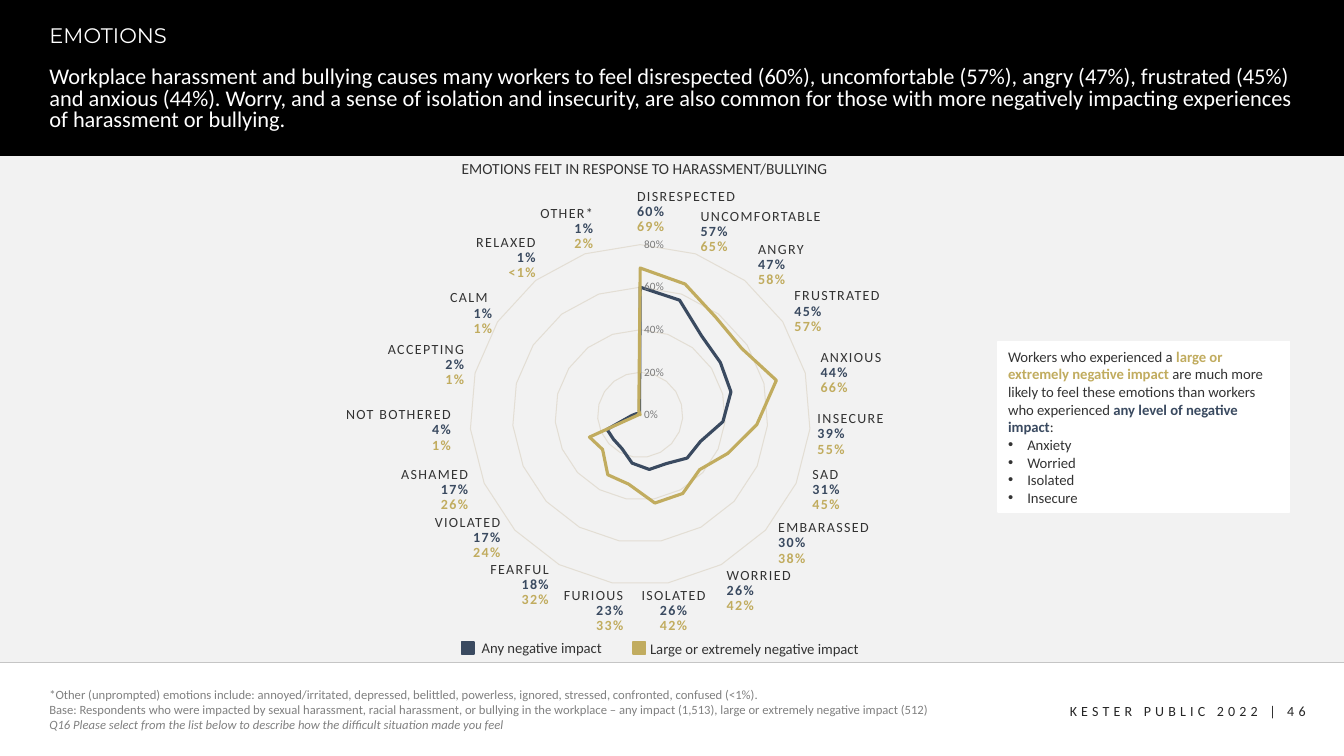
"""Build the slide on emotions felt in response to harassment and bullying."""
from dataclasses import dataclass
from typing import NamedTuple, Optional

from lxml.etree import SubElement
from pptx import Presentation
from pptx.chart.data import CategoryChartData
from pptx.dml.color import RGBColor
from pptx.enum.chart import XL_CHART_TYPE as ChartType, XL_TICK_MARK as TickMark
from pptx.enum.shapes import MSO_CONNECTOR as Connector, MSO_SHAPE as ShapeType
from pptx.enum.text import MSO_ANCHOR as Anchor, MSO_AUTO_SIZE as AutoSize, PP_ALIGN as Align
from pptx.oxml.ns import qn
from pptx.util import Inches, Pt


@dataclass(frozen=True)
class Theme:
    """Colours, fonts and type sizes of the slide."""
    black: str = "000000"
    white: str = "FFFFFF"
    panel: str = "F2F2F2"
    rule: str = "BFBFBF"
    grid: str = "E3DED4"
    ink: str = "333333"
    footer_ink: str = "262626"
    axis_ink: str = "7A7A7A"
    note_ink: str = "808080"
    any_impact: str = "3A4A60"
    large_impact: str = "C1AC5F"
    heading_font: str = "Montserrat"
    body_font: str = "Calibri"
    title_size: float = 15
    lead_size: float = 16
    chart_title_size: float = 11
    callout_size: float = 10.5
    label_size: float = 10
    note_size: float = 9
    axis_size: float = 8


THEME = Theme()


class Box(NamedTuple):
    """A rectangle in inches."""
    left: float
    top: float
    width: float
    height: float

    def lengths(self) -> tuple:
        """Return the four sides as lengths."""
        return tuple(Inches(value) for value in self)


class Emotion(NamedTuple):
    """An emotion with its two percentages and the place of its label."""
    name: str
    any_impact: int
    large_impact: int
    left: float
    top: float
    align: Align = Align.LEFT
    width: float = 1.2


@dataclass(frozen=True)
class Run:
    """A stretch of text in one colour and weight."""
    text: str
    color: str = THEME.ink
    bold: bool = False
    italic: bool = False


class LegendKey(NamedTuple):
    """A legend entry with its swatch and text positions."""
    text: str
    color: str
    swatch_left: float
    text_box: Box


EMOTIONS = [
    Emotion("DISRESPECTED", 60, 69, 6.22, 1.99),
    Emotion("UNCOMFORTABLE", 57, 65, 6.85, 2.19, width=1.53),
    Emotion("ANGRY", 47, 58, 7.42, 2.52),
    Emotion("FRUSTRATED", 45, 57, 7.78, 2.98),
    Emotion("ANXIOUS", 44, 66, 8.04, 3.59),
    Emotion("INSECURE", 39, 55, 8.01, 4.2),
    Emotion("SAD", 31, 45, 7.96, 4.75, width=1.53),
    Emotion("EMBARASSED", 30, 38, 7.62, 5.28),
    Emotion("WORRIED", 26, 42, 7.11, 5.75),
    Emotion("ISOLATED", 26, 42, 6.08, 5.95, Align.CENTER),
    Emotion("FURIOUS", 23, 33, 5.08, 5.95, Align.RIGHT),
    Emotion("FEARFUL", 18, 32, 4.69, 5.69, Align.RIGHT, 0.85),
    Emotion("VIOLATED", 17, 24, 3.86, 5.23, Align.RIGHT),
    Emotion("ASHAMED", 17, 26, 3.54, 4.75, Align.RIGHT),
    Emotion("NOT BOTHERED", 4, 1, 3.26, 4.16, Align.RIGHT, 1.31),
    Emotion("ACCEPTING", 2, 1, 3.5, 3.51, Align.RIGHT),
    Emotion("CALM ", 1, 1, 3.78, 3, Align.RIGHT),
    Emotion("RELAXED", 1, 0, 4.21, 2.45, Align.RIGHT),
    Emotion("OTHER*", 1, 2, 4.78, 2.16, Align.RIGHT),
]
LEGEND = [
    LegendKey("Any negative impact", THEME.any_impact, 4.58, Box(4.68, 6.29, 1.54, 0.28)),
    LegendKey("Large or extremely negative impact", THEME.large_impact, 6.28, Box(6.35, 6.3, 2.53, 0.28)),
]
LEAD = ("Workplace harassment and bullying causes many workers to feel disrespected (60%), uncomfortable (57%), "
        "angry (47%), frustrated (45%) and anxious (44%). Worry, and a sense of isolation and insecurity, are also "
        "common for those with more negatively impacting experiences of harassment or bullying.")
CALLOUT = [[
    Run("Workers who experienced a "),
    Run("large or extremely negative impact", THEME.large_impact, bold=True),
    Run(" are much more likely to feel these emotions than workers who experienced "),
    Run("any level of negative impact", THEME.any_impact, bold=True),
    Run(":"),
]] + [[Run(item)] for item in ("Anxiety", "Worried", "Isolated", "Insecure")]
NOTES = [
    [Run("*Other (unprompted) emotions include: annoyed/irritated, depressed, belittled, powerless, ignored, "
         "stressed, confronted, confused (<1%).", THEME.note_ink)],
    [Run("Base: Respondents who were impacted by sexual harassment, racial harassment, or bullying in the workplace "
         "– any impact (1,513), large or extremely negative impact (512)", THEME.note_ink)],
    [Run("Q16 Please select from the list below to describe how the difficult situation made you feel",
         THEME.note_ink, italic=True)],
]


def rgb(color: str) -> RGBColor:
    """Turn a hex string into a colour."""
    return RGBColor.from_string(color)


def write_text(shape, paragraphs: list, *, size: float, font: str = THEME.body_font, align: Align = Align.LEFT,
               anchor: Anchor = Anchor.MIDDLE, line_spacing: float = 1.0, space_before: float = 0,
               tracking: float = 0, bullets_from: Optional[int] = None) -> None:
    """Fill a shape with paragraphs of runs in the given format."""
    frame = shape.text_frame
    frame.word_wrap, frame.auto_size, frame.vertical_anchor = True, AutoSize.NONE, anchor
    for index, runs in enumerate(paragraphs):
        paragraph = frame.add_paragraph() if index else frame.paragraphs[0]
        paragraph.alignment, paragraph.line_spacing = align, line_spacing
        paragraph.space_before, paragraph.space_after = Pt(space_before), Pt(0)
        if bullets_from is not None and index >= bullets_from:
            properties = paragraph._p.get_or_add_pPr()
            properties.set("marL", str(Inches(0.19)))
            properties.set("indent", str(-Inches(0.19)))
            SubElement(properties, qn("a:buFont"), typeface="Arial")
            SubElement(properties, qn("a:buChar"), char="•")
        for item in runs:
            run = paragraph.add_run()
            run.text = item.text
            run.font.name, run.font.size = font, Pt(size)
            run.font.bold, run.font.italic = item.bold, item.italic
            run.font.color.rgb = rgb(item.color)
            if tracking:
                run._r.get_or_add_rPr().set("spc", str(int(tracking * 100)))


def add_text(slide, box: Box, paragraphs: list, **text_format) -> None:
    """Add a text box."""
    write_text(slide.shapes.add_textbox(*box.lengths()), paragraphs, **text_format)


def add_block(slide, box: Box, color: str):
    """Add a plain filled rectangle."""
    shape = slide.shapes.add_shape(ShapeType.RECTANGLE, *box.lengths())
    shape.shadow.inherit = False
    shape.fill.solid()
    shape.fill.fore_color.rgb = rgb(color)
    shape.line.fill.background()
    return shape


def add_rule(slide, top: float) -> None:
    """Add a thin line across the slide."""
    line = slide.shapes.add_connector(Connector.STRAIGHT, 0, Inches(top), Inches(13.33), Inches(top))
    line.line.color.rgb, line.line.width = rgb(THEME.rule), Pt(0.5)
    SubElement(line._element.spPr, qn("a:effectLst"))


def place_placeholder(placeholder, box: Box, text: str, **text_format) -> None:
    """Move a placeholder to the front and fill it."""
    placeholder.left, placeholder.top, placeholder.width, placeholder.height = box.lengths()
    tree = placeholder.element.getparent()
    tree.append(placeholder.element)
    write_text(placeholder, [[Run(text, THEME.white)]], **text_format)


def add_radar(slide, box: Box) -> None:
    """Add the radar chart of both impact levels."""
    data = CategoryChartData(number_format="0%")
    data.categories = [str(number) for number in range(1, len(EMOTIONS) + 1)]
    data.add_series("Series 1", [emotion.any_impact / 100 for emotion in EMOTIONS])
    data.add_series("Series 2", [emotion.large_impact / 100 for emotion in EMOTIONS])
    chart = slide.shapes.add_chart(ChartType.RADAR, *box.lengths(), data).chart
    chart.has_legend = chart.has_title = False
    chart.font.name, chart.font.size = THEME.body_font, Pt(THEME.label_size)
    chart.font.color.rgb = rgb(THEME.ink)
    chart.plots[0].vary_by_categories = False
    for series, color in zip(chart.plots[0].series, (THEME.any_impact, THEME.large_impact)):
        series.smooth = False
        series.format.line.color.rgb, series.format.line.width = rgb(color), Pt(2.25)
    chart.category_axis.visible = False
    axis = chart.value_axis
    axis.minimum_scale, axis.maximum_scale, axis.major_unit = 0, 0.8, 0.2
    axis.major_tick_mark = axis.minor_tick_mark = TickMark.NONE
    axis.format.line.fill.background()
    axis.has_major_gridlines = True
    grid = axis.major_gridlines.format.line
    grid.color.rgb, grid.width = rgb(THEME.grid), Pt(0.75)
    labels = axis.tick_labels
    labels.number_format, labels.number_format_is_linked = "0%", False
    labels.font.name, labels.font.size = THEME.body_font, Pt(THEME.axis_size)
    labels.font.color.rgb = rgb(THEME.axis_ink)
    plot_area = chart._chartSpace.find(".//" + qn("c:plotArea"))
    for old_layout in plot_area.findall(qn("c:layout")):
        plot_area.remove(old_layout)
    layout = SubElement(plot_area, qn("c:layout"))
    plot_area.insert(0, layout)
    manual = SubElement(layout, qn("c:manualLayout"))
    for tag, value in (("layoutTarget", "inner"), ("xMode", "edge"), ("yMode", "edge"),
                       ("x", "0.231"), ("y", "0.318"), ("w", "0.436"), ("h", "0.654")):
        SubElement(manual, qn(f"c:{tag}"), val=value)


def add_emotion_label(slide, emotion: Emotion) -> None:
    """Add the name and both percentages of an emotion."""
    shares = ((emotion.any_impact, THEME.any_impact), (emotion.large_impact, THEME.large_impact))
    lines = [[Run(emotion.name)]] + [[Run(f"{share or '<1'}%", color, bold=True)] for share, color in shares]
    add_text(slide, Box(emotion.left, emotion.top, emotion.width, 0.22), lines, size=THEME.label_size,
             align=emotion.align, line_spacing=0.9, tracking=1)


def main() -> None:
    """Build and save the presentation."""
    presentation = Presentation()
    presentation.slide_width, presentation.slide_height = Inches(13.33), Inches(7.5)
    slide = presentation.slides.add_slide(presentation.slide_layouts[2])
    title, lead = slide.placeholders
    add_block(slide, Box(0, 0, 13.33, 1.57), THEME.black)
    add_rule(slide, 6.57)
    add_text(slide, Box(10.08, 6.92, 2.97, 0.27), [[Run("KESTER PUBLIC 2022 | 46", THEME.footer_ink)]],
             size=THEME.label_size, align=Align.RIGHT, anchor=Anchor.TOP, tracking=3)
    add_block(slide, Box(0, 1.55, 13.33, 5.02), THEME.panel)
    add_radar(slide, Box(2.87, 0.66, 7.75, 5.36))
    place_placeholder(title, Box(0.39, 0.2, 10.62, 0.4), "EMOTIONS", size=THEME.title_size,
                      font=THEME.heading_font, anchor=Anchor.TOP, line_spacing=0.9)
    place_placeholder(lead, Box(0.39, 0.6, 12.55, 0.78), LEAD, size=THEME.lead_size,
                      line_spacing=0.8, space_before=10)
    for emotion in EMOTIONS:
        add_emotion_label(slide, emotion)
    callout = add_block(slide, Box(9.9, 3.39, 2.89, 1.69), THEME.white)
    callout.line.color.rgb, callout.line.width = rgb(THEME.white), Pt(1)
    write_text(callout, CALLOUT, size=THEME.callout_size, bullets_from=1)
    add_text(slide, Box(0.56, 1.47, 11.67, 0.43), [[Run("EMOTIONS FELT IN RESPONSE TO HARASSMENT/BULLYING")]],
             size=THEME.chart_title_size, align=Align.CENTER, line_spacing=0.9)
    for key in LEGEND:
        swatch = add_block(slide, Box(key.swatch_left, 6.37, 0.12, 0.12), key.color)
        swatch.line.color.rgb, swatch.line.width = rgb(key.color), Pt(1)
        add_text(slide, key.text_box, [[Run(key.text)]], size=THEME.callout_size, anchor=Anchor.TOP)
    add_text(slide, Box(0.39, 6.76, 9.91, 0.56), NOTES, size=THEME.note_size)
    presentation.save("out.pptx")


if __name__ == "__main__":
    main()
